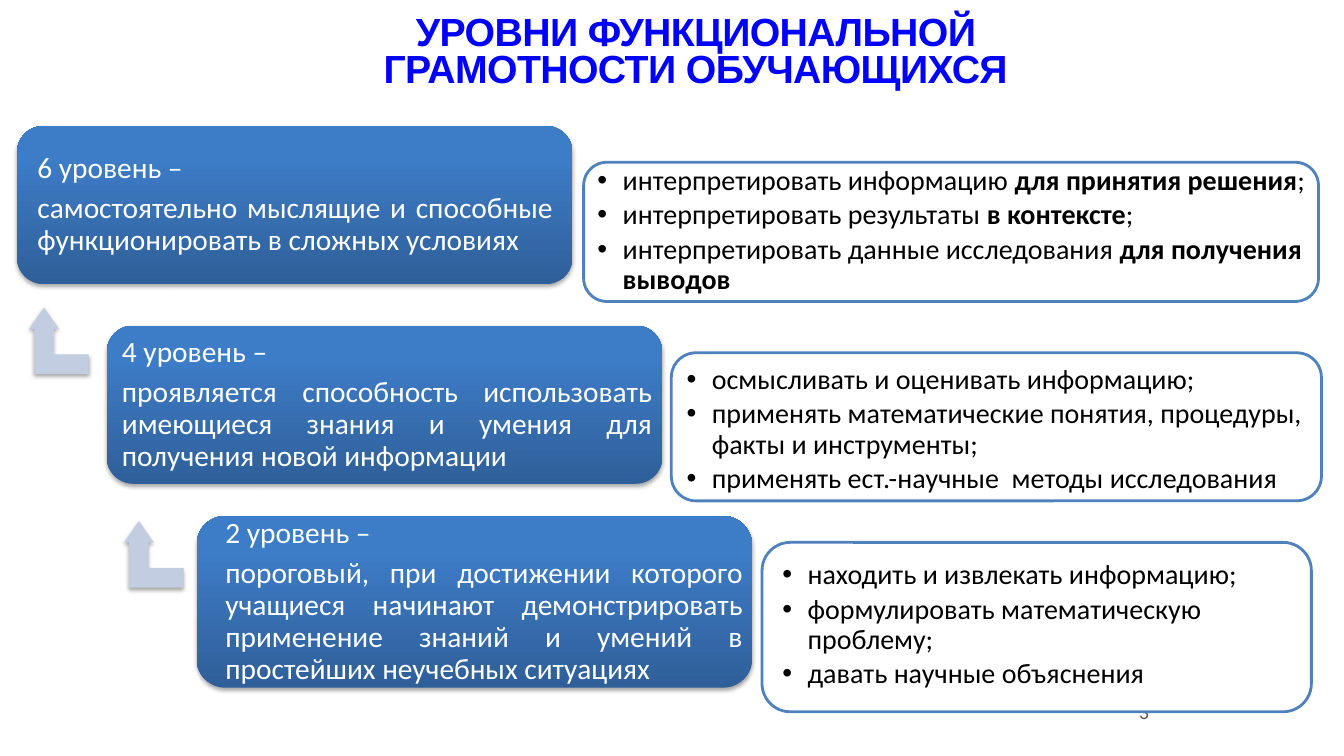
from lxml import etree
from pptx import Presentation
from pptx.dml.color import RGBColor
from pptx.enum import shapes, text
from pptx.oxml import ns
from pptx.util import Pt

COLORS = {
    "title": "0000FF", "number": "595959", "white": "FFFFFF", "black": "000000",
    "card_dark": "2F5F99", "card_light": "3D7CC7", "arrow": "C2CDE1", "outline": "4F81BD",
}
ALIGN = text.PP_ALIGN
ANCHOR = text.MSO_ANCHOR
SHAPE = shapes.MSO_SHAPE

# Each level: card rectangle, its left and right margins, panel, list rectangle.
# Asterisks in a list item enclose bold words.
LEVELS = [
    {
        "card": (140.4, 368.6, 396.7, 122.6), "margins": (14.6, 0.5),
        "panel": (544.3, 387.4, 392.4, 121), "list": (553, 394.6, 383, 109.4),
        "heading": "2 уровень –",
        "meaning": "пороговый, при достижении которого учащиеся начинают демонстрировать "
                   "применение знаний и умений в простейших неучебных ситуациях",
        "skills": ["находить и извлекать информацию;",
                   "формулировать математическую проблему;",
                   "давать научные объяснения"],
    },
    {
        "card": (76.3, 232.6, 396.7, 113), "margins": (5.3, 1.7),
        "panel": (479.5, 252, 464.4, 105.8), "list": (484.6, 255, 454.2, 99),
        "heading": "4 уровень –",
        "meaning": "проявляется способность использовать имеющиеся знания и умения "
                   "для получения новой информации",
        "skills": ["осмысливать и оценивать информацию;",
                   "применять математические понятия, процедуры, факты и инструменты;",
                   "применять ест.-научные  методы исследования"],
    },
    {
        "card": (12.2, 90, 396.7, 113), "margins": (9, 8.5),
        "panel": (416.9, 115.9, 524.9, 99.4), "list": (421, 113, 520, 100),
        "heading": "6 уровень –",
        "meaning": "самостоятельно мыслящие и способные функционировать в сложных условиях",
        "skills": ["интерпретировать информацию *для принятия решения*;",
                   "интерпретировать результаты *в контексте*;",
                   "интерпретировать данные исследования *для получения выводов*"],
    },
]
ARROWS = [(88.6, 372.2, 42.5, 47.5), (20.9, 219.6, 42.5, 47.5)]


def color(name):
    return RGBColor.from_string(COLORS[name])


def write(frame, content, *, size, ink, font="Calibri", bold=False, align=ALIGN.LEFT,
          line=0.9, after=0, bullet=False, tracking=None):
    """Add one paragraph to the frame; asterisks switch bold on and off."""
    first = frame.paragraphs[0]
    paragraph = frame.add_paragraph() if first.runs else first
    paragraph.alignment = align
    paragraph.line_spacing = line
    paragraph.space_after = Pt(after)
    if bullet:
        properties = paragraph._p.get_or_add_pPr()
        properties.set("marL", str(Pt(18)))
        properties.set("indent", str(Pt(-18)))
        etree.SubElement(properties, ns.qn("a:buFont"), typeface="Arial")
        etree.SubElement(properties, ns.qn("a:buChar"), char="•")
    for index, part in enumerate(content.split("*")):
        if not part:
            continue
        run = paragraph.add_run()
        run.text = part
        run.font.name = font
        run.font.size = Pt(size)
        run.font.bold = bold or index % 2 == 1
        run.font.color.rgb = color(ink)
        if tracking is not None:
            run._r.get_or_add_rPr().set("spc", str(round(tracking * 100)))


class LevelSlide:
    def __init__(self, presentation):
        self.slide = presentation.slides.add_slide(presentation.slide_layouts[6])

    def frame(self, shape, margins, anchor=ANCHOR.TOP):
        """Prepare a text frame; margins run left, top, right, bottom."""
        frame = shape.text_frame
        frame.word_wrap = True
        frame.vertical_anchor = anchor
        (frame.margin_left, frame.margin_top,
         frame.margin_right, frame.margin_bottom) = map(Pt, margins)
        return frame

    def text_box(self, box, margins, anchor=ANCHOR.TOP):
        return self.frame(self.slide.shapes.add_textbox(*map(Pt, box)), margins, anchor)

    def shape(self, kind, box, shadow=False):
        shape = self.slide.shapes.add_shape(kind, *map(Pt, box))
        shape.shadow.inherit = False
        shape.line.fill.background()
        if shadow:
            effects = shape._element.spPr.find(ns.qn("a:effectLst"))
            outer = etree.SubElement(effects, ns.qn("a:outerShdw"), blurRad=str(Pt(3.1)),
                                     dist=str(Pt(1.8)), dir="5400000", rotWithShape="0")
            black = etree.SubElement(outer, ns.qn("a:srgbClr"), val=COLORS["black"])
            etree.SubElement(black, ns.qn("a:alpha"), val="35000")
        return shape

    def card(self, box, margins, heading, meaning):
        card = self.shape(SHAPE.ROUNDED_RECTANGLE, box, shadow=True)
        card.fill.gradient()
        card.fill.gradient_angle = 90
        dark, light = card.fill.gradient_stops
        dark.color.rgb, dark.position = color("card_dark"), 0
        light.color.rgb, light.position = color("card_light"), 0.8
        left, right = margins
        frame = self.frame(card, (left, 0, right, 0), ANCHOR.MIDDLE)
        write(frame, heading, size=21, ink="white", after=6)
        write(frame, meaning, size=21, ink="white", align=ALIGN.JUSTIFY)

    def panel(self, box, list_box, skills):
        panel = self.shape(SHAPE.ROUNDED_RECTANGLE, box)
        panel.fill.solid()
        panel.fill.fore_color.rgb = color("white")
        panel.line.color.rgb = color("outline")
        panel.line.width = Pt(2)
        frame = self.text_box(list_box, (5.8,) * 4)
        for skill in skills:
            write(frame, skill, size=20, ink="black", after=3, bullet=True)

    def arrow(self, box):
        arrow = self.shape(SHAPE.BENT_UP_ARROW, box, shadow=True)
        arrow.adjustments[0] = 0.33
        arrow.adjustments[1] = 0.25
        arrow.adjustments[2] = 0.36
        arrow.fill.solid()
        arrow.fill.fore_color.rgb = color("arrow")
        arrow._element.spPr.xfrm.set("flipH", "1")


def main():
    presentation = Presentation()
    presentation.slide_width, presentation.slide_height = Pt(960), Pt(540)
    page = LevelSlide(presentation)
    margins = (7.9, 4.3, 7.9, 4.3)
    number = page.text_box((786.2, 499, 42.5, 18.7), margins, ANCHOR.MIDDLE)
    write(number, "3", size=14, ink="number", align=ALIGN.RIGHT, line=1)
    title = page.text_box((211, 7.2, 571.7, 62.6), margins)
    write(title, "УРОВНИ ФУНКЦИОНАЛЬНОЙ ГРАМОТНОСТИ ОБУЧАЮЩИХСЯ", size=28, ink="title",
          font="Arial", bold=True, align=ALIGN.CENTER, line=0.8, tracking=-0.4)
    for level in LEVELS:
        page.card(level["card"], level["margins"], level["heading"], level["meaning"])
        page.panel(level["panel"], level["list"], level["skills"])
    for box in ARROWS:
        page.arrow(box)
    presentation.save("out.pptx")


if __name__ == "__main__":
    main()
